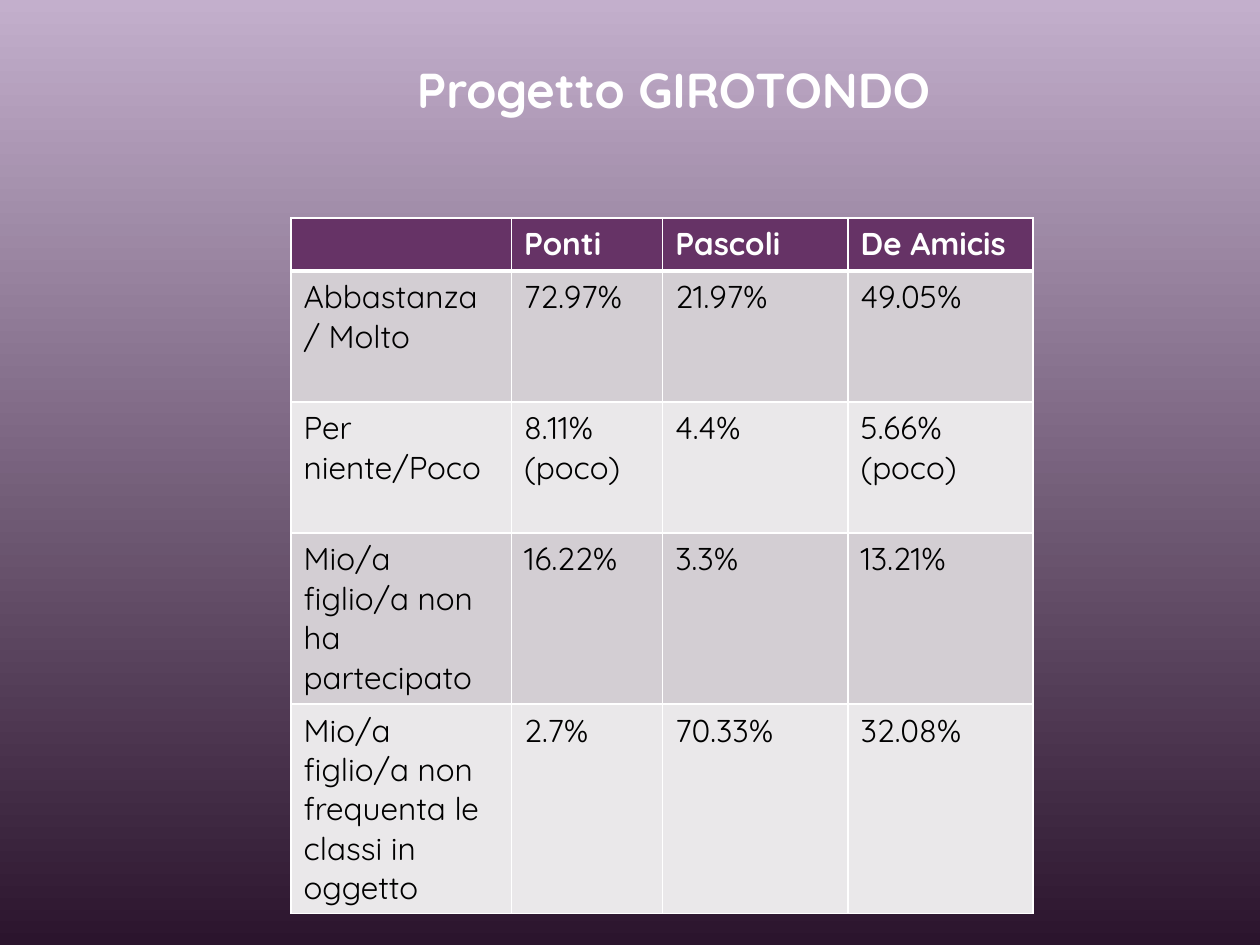
from dataclasses import dataclass

from lxml import etree
from pptx import Presentation
from pptx.dml.color import RGBColor
from pptx.enum.text import MSO_ANCHOR, PP_ALIGN
from pptx.oxml.ns import qn
from pptx.util import Inches, Pt

MIDDLE = MSO_ANCHOR.MIDDLE
CENTER = PP_ALIGN.CENTER


@dataclass(frozen=True)
class Theme:
    font: str = "Quicksand"
    title_size: int = 28
    table_size: int = 18
    sky: str = "C3AFCC"
    night: str = "2B142D"
    white: str = "FFFFFF"
    black: str = "000000"
    header: str = "663366"
    bands: tuple = ("D3CED3", "EAE8EA")


theme = Theme()


def style_text(para, size, color, bold):
    font = para.font
    for target in [font] + [span.font for span in para.runs]:
        target.name = theme.font
        target.size = Pt(size)
        target.bold = bold
        target.color.rgb = RGBColor.from_string(color)


def set_borders(cell, top, bottom):
    """Draw white cell edges; top and bottom are widths in points."""
    properties = cell._tc.get_or_add_tcPr()
    edges = (("a:lnL", 1), ("a:lnR", 1), ("a:lnT", top), ("a:lnB", bottom))
    for position, (tag, width) in enumerate(edges):
        line = etree.Element(qn(tag), w=str(Pt(width)))
        fill = etree.SubElement(line, qn("a:solidFill"))
        etree.SubElement(fill, qn("a:srgbClr"), val=theme.white)
        properties.insert(position, line)


deck = Presentation()
deck.slide_width = Inches(10)
deck.slide_height = Inches(7.5)
page = deck.slides.add_slide(deck.slide_layouts[6])

# Background
background = page.background.fill
background.gradient()
background.gradient_angle = 270
for stop, color in zip(background.gradient_stops, (theme.sky, theme.night)):
    stop.color.rgb = RGBColor.from_string(color)

# Title
title = page.shapes.add_textbox(Inches(1.2), Inches(0.1), Inches(8.29), Inches(1.25))
title_frame = title.text_frame
title_frame.word_wrap = True
title_frame.vertical_anchor = MIDDLE
title_frame.text = "Progetto GIROTONDO"
heading = title_frame.paragraphs[0]
heading.alignment = CENTER
heading.line_spacing = 0.95
style_text(heading, theme.title_size, theme.white, True)

# Survey results by school
results = [
    ["", "Ponti", "Pascoli", "De Amicis"],
    ["Abbastanza / Molto", "72.97%", "21.97%", "49.05%"],
    ["Per niente/Poco", "8.11%\n(poco)", "4.4%", "5.66%\n(poco)"],
    ["Mio/a figlio/a non ha partecipato", "16.22%", "3.3%", "13.21%"],
    ["Mio/a figlio/a non frequenta le classi in oggetto", "2.7%", "70.33%", "32.08%"],
]
column_widths = [1.75, 1.2, 1.47, 1.47]
row_heights = [0.42, 1.04, 1.04, 1.36, 1.66]

table = page.shapes.add_table(
    len(row_heights), len(column_widths), Inches(2.31), Inches(1.73),
    Inches(sum(column_widths)), Inches(sum(row_heights)),
).table
for column, width in zip(table.columns, column_widths):
    column.width = Inches(width)

for row_index, (row, height, texts) in enumerate(zip(table.rows, row_heights, results)):
    row.height = Inches(height)
    is_header = row_index == 0
    fill_color = theme.header if is_header else theme.bands[(row_index - 1) % 2]
    text_color = theme.white if is_header else theme.black
    for cell, text in zip(row.cells, texts):
        cell.fill.solid()
        cell.fill.fore_color.rgb = RGBColor.from_string(fill_color)
        set_borders(cell, top=3 if row_index == 1 else 1, bottom=3 if is_header else 1)
        cell.text_frame.text = text
        for para in cell.text_frame.paragraphs:
            style_text(para, theme.table_size, text_color, is_header)

deck.save("out.pptx")
